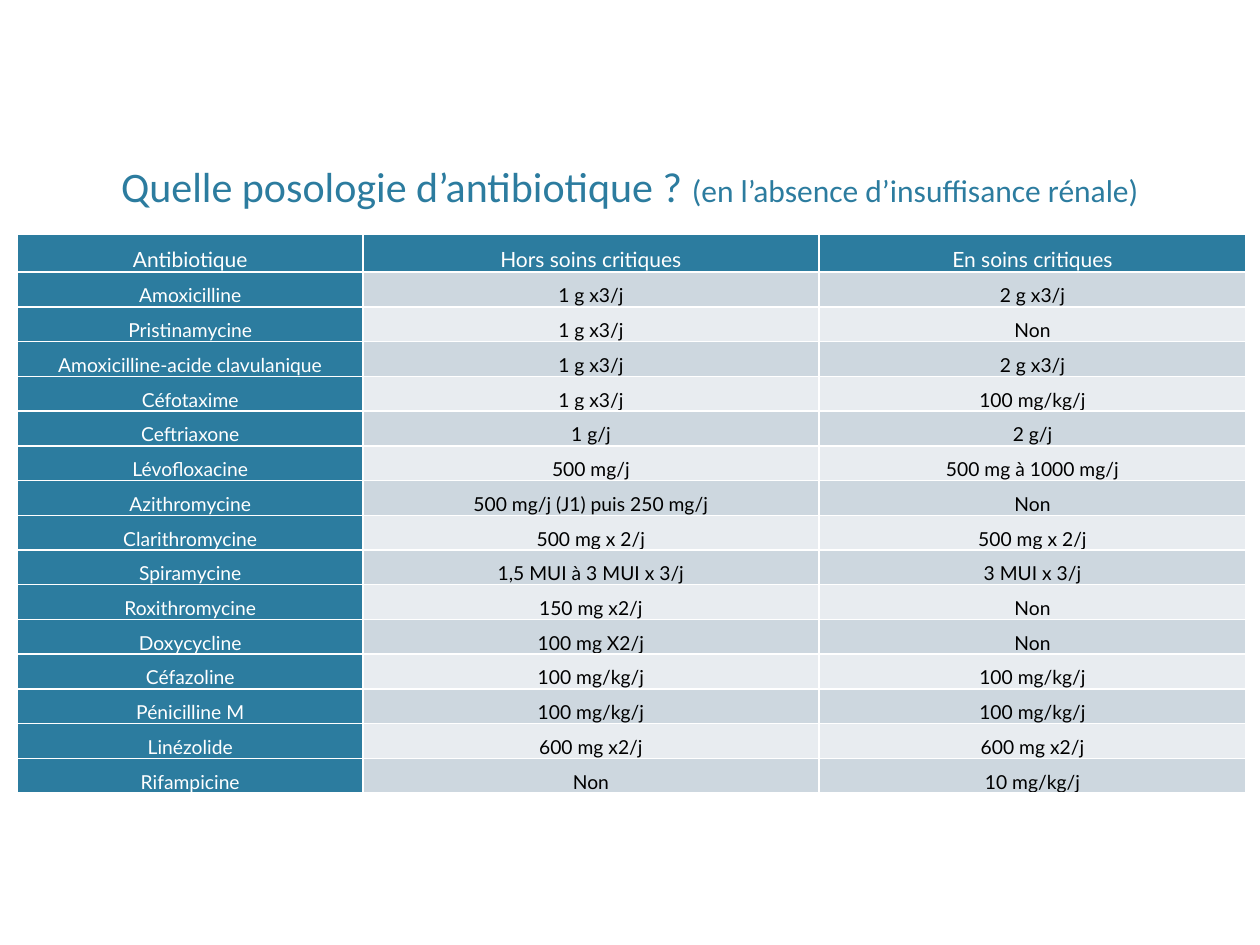
from lxml.etree import SubElement
from pptx import Presentation
from pptx.dml.color import RGBColor
from pptx.enum.text import MSO_ANCHOR as Anchor, PP_ALIGN as Align
from pptx.oxml.ns import qn
from pptx.util import Pt

TEAL = RGBColor(0x2C, 0x7C, 0x9F)
WHITE = RGBColor(0xFF, 0xFF, 0xFF)
BLACK = RGBColor(0, 0, 0)
BANDS = RGBColor(0xCD, 0xD7, 0xDF), RGBColor(0xE8, 0xEC, 0xF0)

TITLE = [("Quelle posologie d’antibiotique ? ", 24),
         ("(en l’absence d’insuffisance rénale)", 18)]
DOSES = [
    ("Antibiotique", "Hors soins critiques", "En soins critiques"),
    ("Amoxicilline", "1 g x3/j", "2 g x3/j"),
    ("Pristinamycine", "1 g x3/j", "Non"),
    ("Amoxicilline-acide clavulanique", "1 g x3/j", "2 g x3/j"),
    ("Céfotaxime", "1 g x3/j", "100 mg/kg/j"),
    ("Ceftriaxone", "1 g/j", "2 g/j"),
    ("Lévofloxacine", "500 mg/j", "500 mg à 1000 mg/j"),
    ("Azithromycine", "500 mg/j (J1) puis 250 mg/j", "Non"),
    ("Clarithromycine", "500 mg x 2/j", "500 mg x 2/j"),
    ("Spiramycine", "1,5 MUI à 3 MUI x 3/j", "3 MUI x 3/j"),
    ("Roxithromycine", "150 mg x2/j", "Non"),
    ("Doxycycline", "100 mg X2/j", "Non"),
    ("Céfazoline", "100 mg/kg/j", "100 mg/kg/j"),
    ("Pénicilline M", "100 mg/kg/j", "100 mg/kg/j"),
    ("Linézolide", "600 mg x2/j", "600 mg x2/j"),
    ("Rifampicine", "Non", "10 mg/kg/j"),
]
COL_WIDTHS = 197.3, 260.6, 244.1
HEADER_HEIGHT = 21.6


def add_title(s, left, top, width, height):
    """Place the two-size title at the bottom of its box."""
    tf = s.shapes.add_textbox(Pt(left), Pt(top), Pt(width), Pt(height)).text_frame
    tf.word_wrap = True
    tf.vertical_anchor = Anchor.BOTTOM
    p = tf.paragraphs[0]
    p.alignment = Align.CENTER
    p.font.name = "Calibri"
    p.font.color.rgb = TEAL
    for text, size in TITLE:
        r = p.add_run()
        r.text = text
        r.font.size = Pt(size)


def add_borders(cell):
    """Draw a white one-point line on each side of a cell."""
    tc_pr = cell._tc.get_or_add_tcPr()
    for side in ("a:lnL", "a:lnR", "a:lnT", "a:lnB"):
        ln = SubElement(tc_pr, qn(side), w=str(Pt(1)))
        fill = SubElement(ln, qn("a:solidFill"))
        SubElement(fill, qn("a:srgbClr"), val=str(WHITE))


def style_cell(cell, text, size, color, fill):
    """Fill one cell with centred text."""
    add_borders(cell)
    cell.fill.solid()
    cell.fill.fore_color.rgb = fill
    cell.vertical_anchor = Anchor.MIDDLE
    cell.margin_left = cell.margin_right = Pt(4.3)
    cell.margin_top = cell.margin_bottom = 0
    p = cell.text_frame.paragraphs[0]
    p.text = text
    p.alignment = Align.CENTER
    p.line_spacing = 1.5
    p.font.name = "Lato"
    p.font.size = Pt(size)
    p.font.color.rgb = color


def add_dose_table(s, left, top, width, height):
    """Place the banded dose table with its header row and name column."""
    table = s.shapes.add_table(len(DOSES), len(COL_WIDTHS), Pt(left), Pt(top),
                               Pt(width), Pt(height)).table
    for column, share in zip(table.columns, COL_WIDTHS):
        column.width = Pt(width * share / sum(COL_WIDTHS))
    row_height = (height - HEADER_HEIGHT) / (len(DOSES) - 1)
    for i, row in enumerate(DOSES):
        table.rows[i].height = Pt(row_height if i else HEADER_HEIGHT)
        for j, text in enumerate(row):
            heading = i == 0 or j == 0
            style_cell(table.cell(i, j), text, 11 if i else 12,
                       WHITE if heading else BLACK,
                       TEAL if heading else BANDS[(i - 1) % 2])


def main():
    """Build the slide and save it."""
    prs = Presentation()
    prs.slide_width, prs.slide_height = Pt(720), Pt(540)
    s = prs.slides.add_slide(prs.slide_layouts[6])
    add_title(s, 43.2, 79.2, 633.6, 44.6)
    add_dose_table(s, 10.1, 133.9, 702, 318.2)
    prs.save("out.pptx")


if __name__ == "__main__":
    main()
